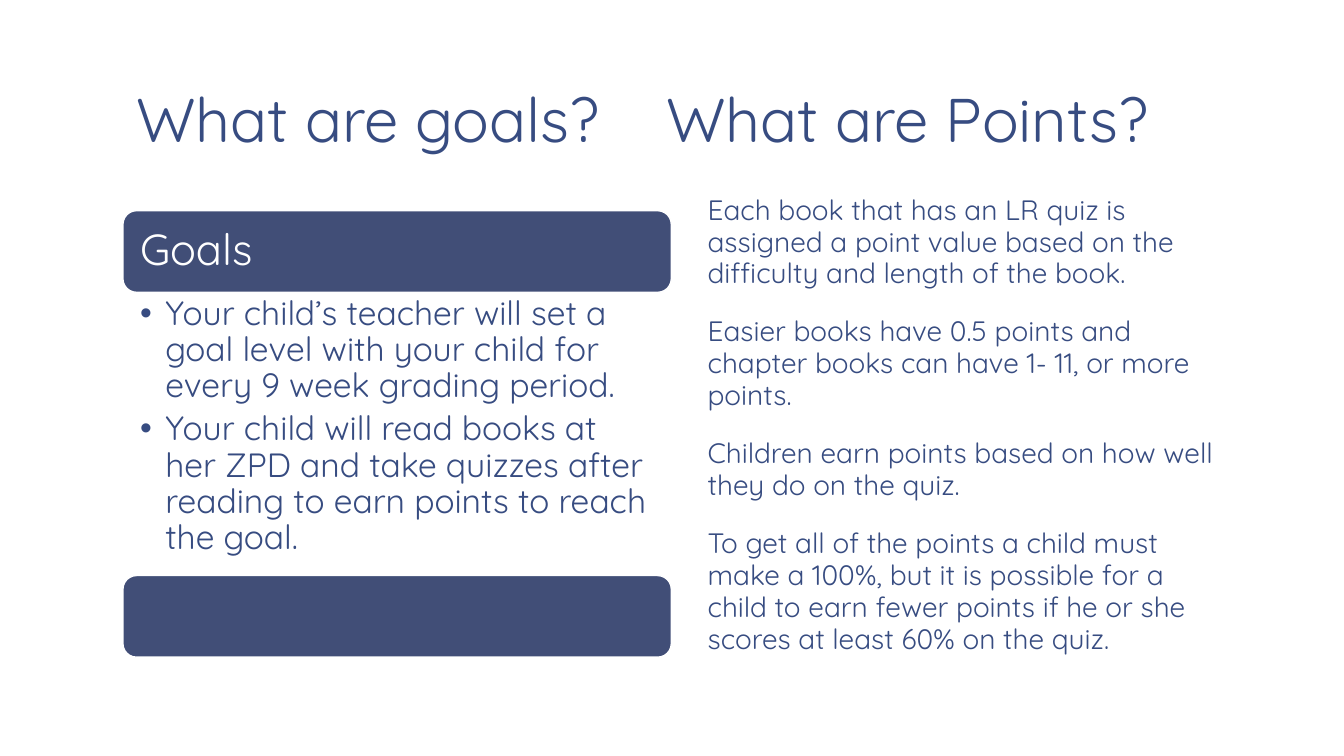
from lxml.etree import SubElement
from pptx import Presentation
from pptx.dml.color import RGBColor
from pptx.enum.shapes import MSO_SHAPE
from pptx.enum.text import MSO_ANCHOR, MSO_AUTO_SIZE, PP_ALIGN
from pptx.oxml.ns import qn
from pptx.util import Pt

NAVY = RGBColor(0x37, 0x4C, 0x81)
SLATE = RGBColor(0x41, 0x4E, 0x77)
WHITE = RGBColor(0xFF, 0xFF, 0xFF)
FONT = "Quicksand"

GOALS = [
    "Your child’s teacher will set a goal level with your child for every 9 week grading period.",
    "Your child will read books at her ZPD and take quizzes after reading to earn points to reach the goal.",
]
POINTS = [
    "Each book that has an LR quiz is assigned a point value based on the difficulty and length of the book.",
    "Easier books have 0.5 points and chapter books can have 1- 11, or more points.",
    "Children earn points based on how well they do on the quiz.",
    "To get all of the points a child must make a 100%, but it is possible for a child to earn fewer points "
    "if he or she scores at least 60% on the quiz.",
]


def place(holder, box):
    """Move a shape to a box of left, top, width and height in points."""
    holder.left, holder.top, holder.width, holder.height = (Pt(length) for length in box)


def write(holder, paragraphs, size, color=NAVY, spacing=0.9, before=0, after=0,
          anchor=MSO_ANCHOR.TOP, insets=(9.36, 5.04, 9.36, 5.04), indent=0, bullet=None, tab=None):
    """Fill a shape with formatted paragraphs."""
    frame = holder.text_frame
    frame.word_wrap = True
    frame.auto_size = MSO_AUTO_SIZE.NONE
    frame.vertical_anchor = anchor
    frame.margin_left, frame.margin_top, frame.margin_right, frame.margin_bottom = map(Pt, insets)
    for index, text in enumerate(paragraphs):
        paragraph = frame.add_paragraph() if index else frame.paragraphs[0]
        properties = paragraph._p.get_or_add_pPr()
        properties.set("marL", str(Pt(indent)))
        properties.set("indent", str(-Pt(indent)))
        if bullet:
            SubElement(properties, qn("a:buChar"), char=bullet)
        else:
            SubElement(properties, qn("a:buNone"))
        if tab:
            properties.set("defTabSz", str(Pt(tab)))
            stops = SubElement(properties, qn("a:tabLst"))
            SubElement(stops, qn("a:tab"), pos=str(Pt(tab)), algn="l")
        paragraph.alignment = PP_ALIGN.LEFT
        paragraph.line_spacing = spacing
        paragraph.space_before = Pt(before if index else 0)
        paragraph.space_after = Pt(after)
        run = paragraph.add_run()
        run.text = text
        run.font.name, run.font.size, run.font.color.rgb = FONT, Pt(size), color


def add_bar(slide, box):
    """Draw one rounded bar in the box."""
    bar = slide.shapes.add_shape(MSO_SHAPE.ROUNDED_RECTANGLE, *map(Pt, box))
    bar.shadow.inherit = False
    bar.fill.solid()
    bar.fill.fore_color.rgb = SLATE
    bar.line.color.rgb = WHITE
    bar.line.width = Pt(1)
    return bar


def add_heading(slide, box):
    """Set both questions in the title, the second at a tab stop."""
    heading = slide.shapes.title
    place(heading, box)
    write(heading, ["What are goals?\tWhat are Points?"], 44, spacing=0.85,
          anchor=MSO_ANCHOR.BOTTOM, tab=378.6)


def add_goals(slide, box, bar_height=58.32):
    """Stack a labelled bar, the goals list and a closing bar."""
    left, top, width, height = box
    label_bar = add_bar(slide, (left, top, width, bar_height))
    write(label_bar, ["Goals"], 31, color=WHITE, anchor=MSO_ANCHOR.MIDDLE)
    goals = slide.placeholders[1]
    place(goals, (left, top + bar_height, width, height - 2 * bar_height))
    write(goals, GOALS, 24, after=4.8, insets=(12.24, 2.88, 17.28, 2.88), indent=18, bullet="•")
    add_bar(slide, (left, top + height - bar_height, width, bar_height))


def add_points(slide, box):
    """Explain points in the second body placeholder."""
    points = slide.placeholders[2]
    place(points, box)
    write(points, POINTS, 20, spacing=0.95, before=18.6)


def main():
    """Build and save the slide."""
    deck = Presentation()
    deck.slide_width, deck.slide_height = Pt(960), Pt(540)
    slide = deck.slides.add_slide(deck.slide_layouts[3])
    slide.background.fill.solid()
    slide.background.fill.fore_color.rgb = WHITE
    left, width, column = 87.84, 799.92, 391.68
    add_heading(slide, (left, 5.76, width, 110.16))
    add_goals(slide, (left, 150.48, column, 318.96))
    add_points(slide, (left + width - column, 133.92, column, 352.08))
    deck.save("out.pptx")


if __name__ == "__main__":
    main()
